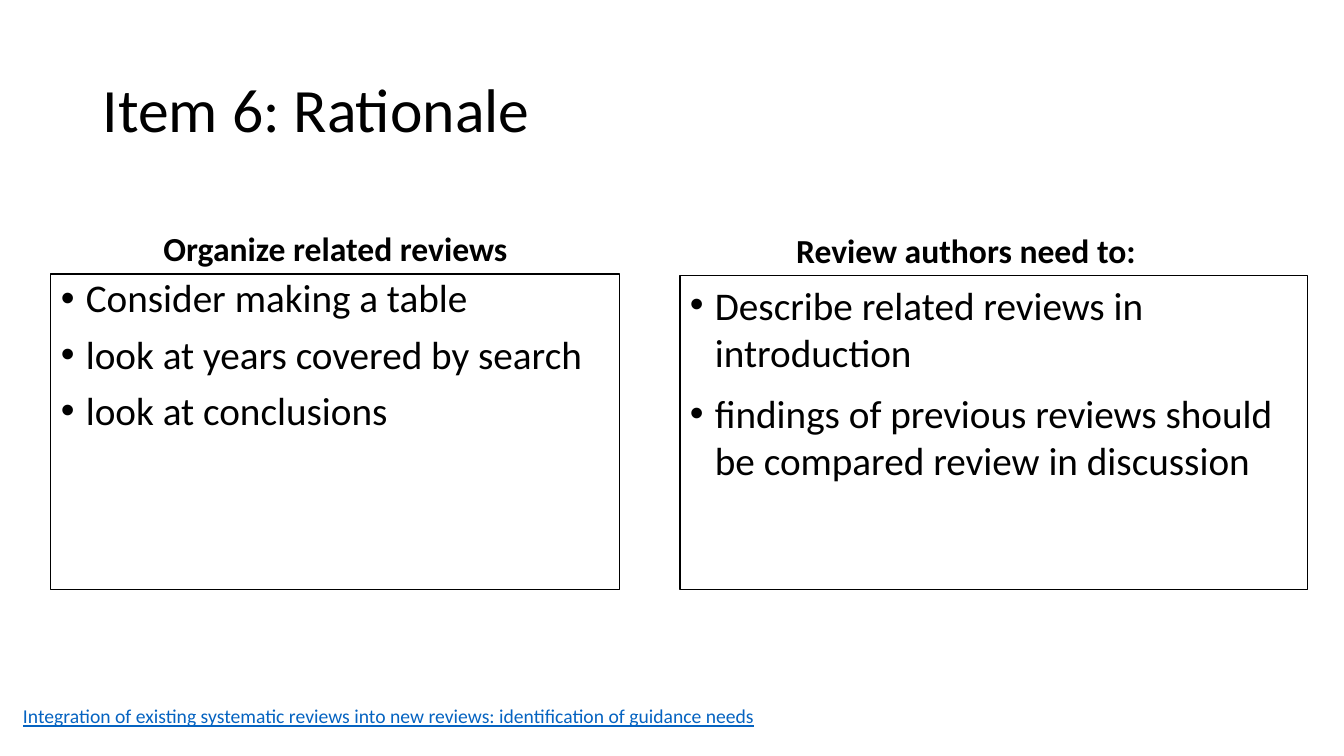
from pptx import Presentation
from pptx.dml.color import RGBColor
from pptx.enum.shapes import MSO_SHAPE as Shape
from pptx.enum.text import MSO_ANCHOR as Anchor, PP_ALIGN as Align
from pptx.oxml.ns import qn
from pptx.util import Emu, Pt

BLACK = RGBColor(0x00, 0x00, 0x00)
LINK_BLUE = RGBColor(0x05, 0x63, 0xC1)


class SlideBuilder:
    """Adds consistently styled elements to the current page, measured in px."""

    font_name = "Calibri"
    emu_per_px = 914400 / 100.8
    bullet_indent = 25

    def __init__(self, deck):
        self.page = deck.slides.add_slide(deck.slide_layouts[6])

    @classmethod
    def emu(cls, px):
        return Emu(round(px * cls.emu_per_px))

    def fill_text(self, box, lines, size, color=BLACK, anchor=Anchor.TOP,
                  align=Align.LEFT, spacing=1.0, before=0, bold=False, underline=False):
        frame = box.text_frame
        frame.word_wrap = True
        frame.vertical_anchor = anchor
        frame.text = "\n".join(lines)
        for para in frame.paragraphs:
            para.alignment = align
            para.line_spacing = spacing
            para.space_before = Pt(before)
            para.font.name = self.font_name
            para.font.size = Pt(size)
            para.font.color.rgb = color
            para.font.bold = bold
            para.font.underline = underline
        return frame

    def text(self, bounds, line, size, **style):
        box = self.page.shapes.add_textbox(*map(self.emu, bounds))
        self.fill_text(box, [line], size, **style)

    def heading(self, bounds, line):
        self.text(bounds, line, 24, anchor=Anchor.BOTTOM, align=Align.CENTER,
                  spacing=0.9, before=10, bold=True)

    def bullet_box(self, bounds, lines, spacing):
        box = self.page.shapes.add_shape(Shape.RECTANGLE, *map(self.emu, bounds))
        box.shadow.inherit = False
        box.fill.background()
        box.line.color.rgb = BLACK
        box.line.width = Pt(0.75)
        frame = self.fill_text(box, lines, 28, spacing=spacing, before=10)
        indent = self.emu(self.bullet_indent)
        for para in frame.paragraphs:
            properties = para._p.get_or_add_pPr()
            properties.set("marL", str(indent))
            properties.set("indent", str(-indent))
            bullet_font = properties.makeelement(qn("a:buFont"), {"typeface": "Arial"})
            properties.insert_element_before(bullet_font, "a:defRPr")
            bullet = properties.makeelement(qn("a:buChar"), {"char": "•"})
            properties.insert_element_before(bullet, "a:defRPr")


def main():
    deck = Presentation()
    deck.slide_width = SlideBuilder.emu(1344)
    deck.slide_height = SlideBuilder.emu(756)
    slide = SlideBuilder(deck)

    slide.text((93, 40, 1159, 146), "Item 6: Rationale", 44,
               anchor=Anchor.MIDDLE, spacing=0.9)

    slide.heading((51, 183, 569, 91), "Organize related reviews")
    slide.bullet_box((51, 274, 569, 316), [
        "Consider making a table",
        "look at years covered by search",
        "look at conclusions",
    ], spacing=0.9)

    slide.heading((680, 185, 572, 91), "Review authors need to:")
    slide.bullet_box((680, 276, 628, 314), [
        "Describe related reviews in introduction",
        "findings of previous reviews should be compared review in discussion",
    ], spacing=1.0)

    slide.text((13, 699, 775, 35),
               "Integration of existing systematic reviews into new reviews: "
               "identification of guidance needs",
               14, color=LINK_BLUE, underline=True)

    deck.save("out.pptx")


if __name__ == "__main__":
    main()
